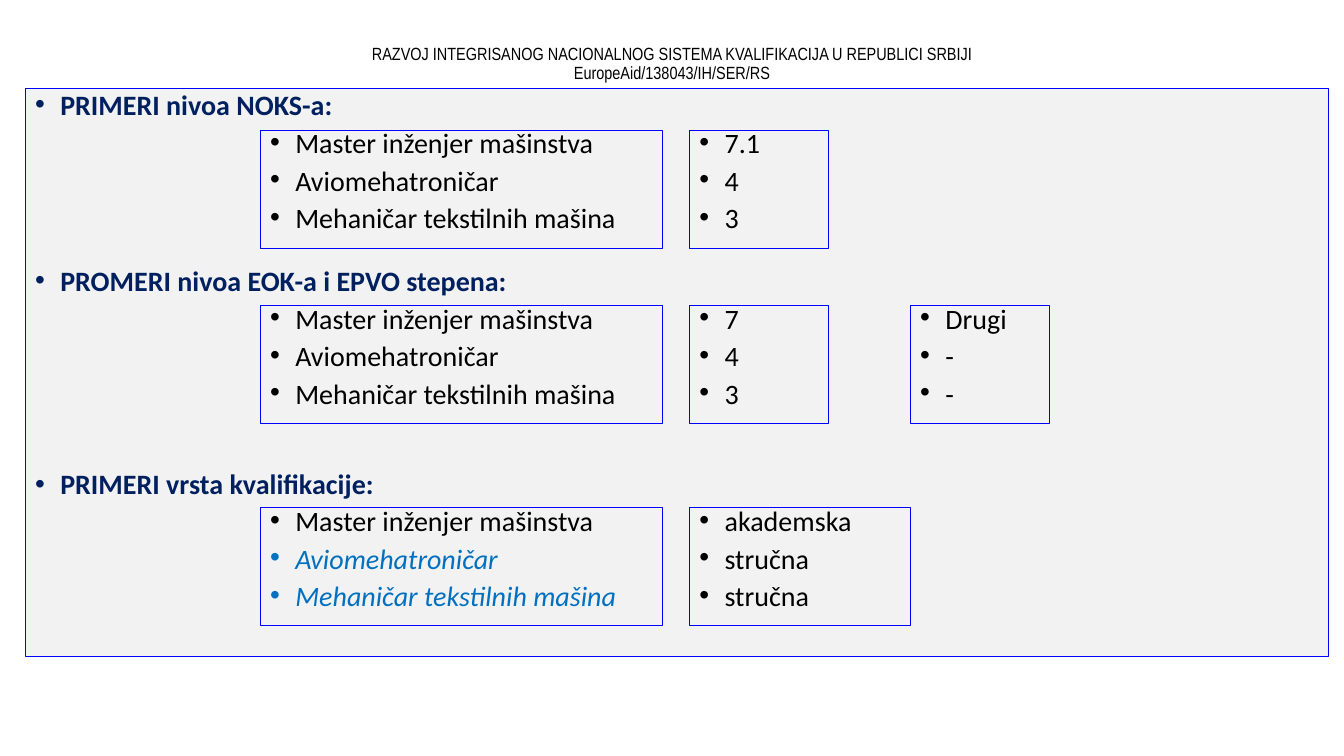
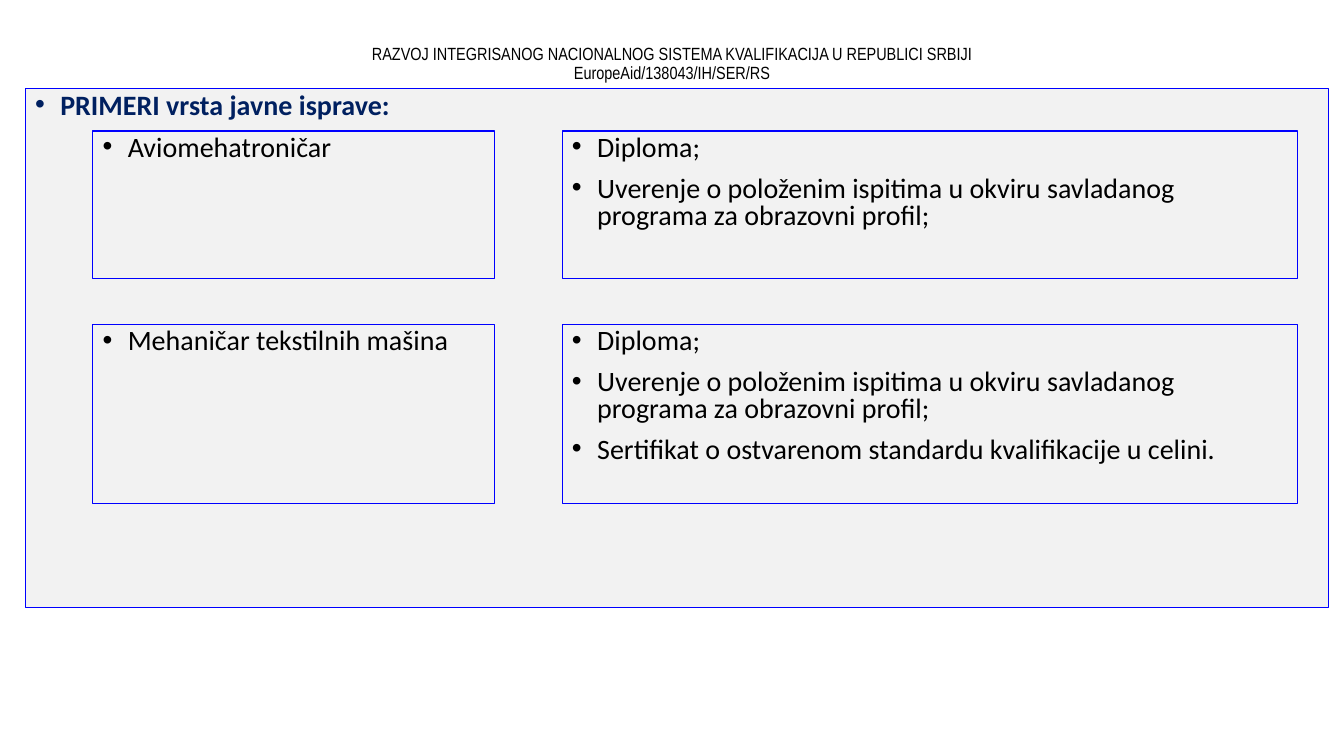
from lxml import etree
from pptx import Presentation
from pptx.dml.color import RGBColor
from pptx.enum.shapes import MSO_SHAPE
from pptx.enum.text import MSO_ANCHOR, MSO_AUTO_SIZE, PP_ALIGN
from pptx.oxml.ns import qn
from pptx.util import Pt

BLACK = RGBColor(0x00, 0x00, 0x00)
NAVY = RGBColor(0x00, 0x20, 0x60)
BLUE = RGBColor(0x00, 0x70, 0xC0)
BORDER = RGBColor(0x00, 0x00, 0xFF)
PALE_GRAY = RGBColor(0xF2, 0xF2, 0xF2)

TITLE = ("RAZVOJ INTEGRISANOG NACIONALNOG SISTEMA KVALIFIKACIJA U REPUBLICI SRBIJI\v"
         "EuropeAid/138043/IH/SER/RS")
MASTER = "Master inženjer mašinstva"
AVIATION = "Aviomehatroničar"
TEXTILE = "Mehaničar tekstilnih mašina"
DIPLOMA = "Diploma;"
EXAMS = "Uverenje o položenim ispitima u okviru savladanog programa za obrazovni profil;"
CERTIFICATE = "Sertifikat o ostvarenom standardu kvalifikacije u celini."

presentation = Presentation()
presentation.slide_width = Pt(960)
presentation.slide_height = Pt(540)


def add_list_box(slide, left, top, width, height, items, line_spacing=0.8,
                 gaps=None, color=BLACK, bold=False):
    """Draw a bordered box with a bulleted list; gaps are the spaces before items."""
    shape = slide.shapes.add_shape(MSO_SHAPE.RECTANGLE, Pt(left), Pt(top),
                                   Pt(width), Pt(height))
    shape.shadow.inherit = False
    shape.fill.solid()
    shape.fill.fore_color.rgb = PALE_GRAY
    shape.line.color.rgb = BORDER
    shape.line.width = Pt(0.75)
    frame = shape.text_frame
    frame.word_wrap = True
    frame.vertical_anchor = MSO_ANCHOR.TOP
    gaps = gaps or [0] + [10] * (len(items) - 1)
    for index, (item, gap) in enumerate(zip(items, gaps)):
        paragraph = frame.paragraphs[0] if index == 0 else frame.add_paragraph()
        paragraph.text = item
        properties = paragraph._p.get_or_add_pPr()
        properties.set("marL", str(Pt(18)))
        properties.set("indent", str(-Pt(18)))
        etree.SubElement(properties, qn("a:buFont"), typeface="Arial")
        etree.SubElement(properties, qn("a:buChar"), char="•")
        paragraph.alignment = PP_ALIGN.LEFT
        paragraph.line_spacing = line_spacing
        paragraph.space_before = Pt(gap)
        paragraph.font.name = "Calibri"
        paragraph.font.size = Pt(20)
        paragraph.font.bold = bold
        paragraph.font.color.rgb = color
    return shape


def add_panel_slide(panel_height, headings, gaps):
    """Add a slide with the shared title and the large panel of headings."""
    slide = presentation.slides.add_slide(presentation.slide_layouts[5])
    title = slide.shapes.title
    title.left, title.top, title.width, title.height = Pt(66), Pt(28.8), Pt(828), Pt(34.6)
    frame = title.text_frame
    frame.text = TITLE
    frame.word_wrap = True
    frame.auto_size = MSO_AUTO_SIZE.NONE
    frame.vertical_anchor = MSO_ANCHOR.MIDDLE
    paragraph = frame.paragraphs[0]
    paragraph.alignment = PP_ALIGN.CENTER
    paragraph.line_spacing = 0.9
    paragraph.space_before = Pt(0)
    paragraph.font.name = "Arial Narrow"
    paragraph.font.size = Pt(12.6)
    paragraph.font.color.rgb = BLACK
    add_list_box(slide, 18, 63.4, 931, panel_height, headings,
                 gaps=gaps, color=NAVY, bold=True)
    return slide


# Slide 1: levels and types of qualifications
slide = add_panel_slide(405.4, ["PRIMERI nivoa NOKS-a:",
                                "PROMERI nivoa EOK-a i EPVO stepena:",
                                "PRIMERI vrsta kvalifikacije:"], [0, 106.4, 126.4])
NAME_LEFT, NAME_WIDTH = 185.8, 287.3
LEVEL_LEFT, DEGREE_LEFT, LEVEL_WIDTH = 492.5, 650.2, 99.4
TYPE_WIDTH = DEGREE_LEFT - LEVEL_LEFT
example_rows = [
    (92.9, [(LEVEL_LEFT, LEVEL_WIDTH, ["7.1", "4", "3"])]),
    (218.2, [(LEVEL_LEFT, LEVEL_WIDTH, ["7", "4", "3"]),
             (DEGREE_LEFT, LEVEL_WIDTH, ["Drugi", "-", "-"])]),
    (362.7, [(LEVEL_LEFT, TYPE_WIDTH, ["akademska", "stručna", "stručna"])]),
]
for top, value_boxes in example_rows:
    boxes = [(NAME_LEFT, NAME_WIDTH, [MASTER, AVIATION, TEXTILE])] + value_boxes
    shapes = [add_list_box(slide, left, top, width, 84.4, items, line_spacing=0.7)
              for left, width, items in boxes]

# Vocational qualifications stand out in the last row
for paragraph in shapes[0].text_frame.paragraphs[1:]:
    paragraph.font.italic = True
    paragraph.font.color.rgb = BLUE

# Slide 2: types of public documents
slide = add_panel_slide(370.8, ["PRIMERI vrsta javne isprave:"], [0])
for top, height, name, documents in [
        (93.6, 105.1, AVIATION, [DIPLOMA, EXAMS]),
        (231.8, 127.6, TEXTILE, [DIPLOMA, EXAMS, CERTIFICATE])]:
    add_list_box(slide, 66.2, top, NAME_WIDTH, height, [name])
    add_list_box(slide, 401.5, top, 525.6, height, documents)

presentation.save("out.pptx")
